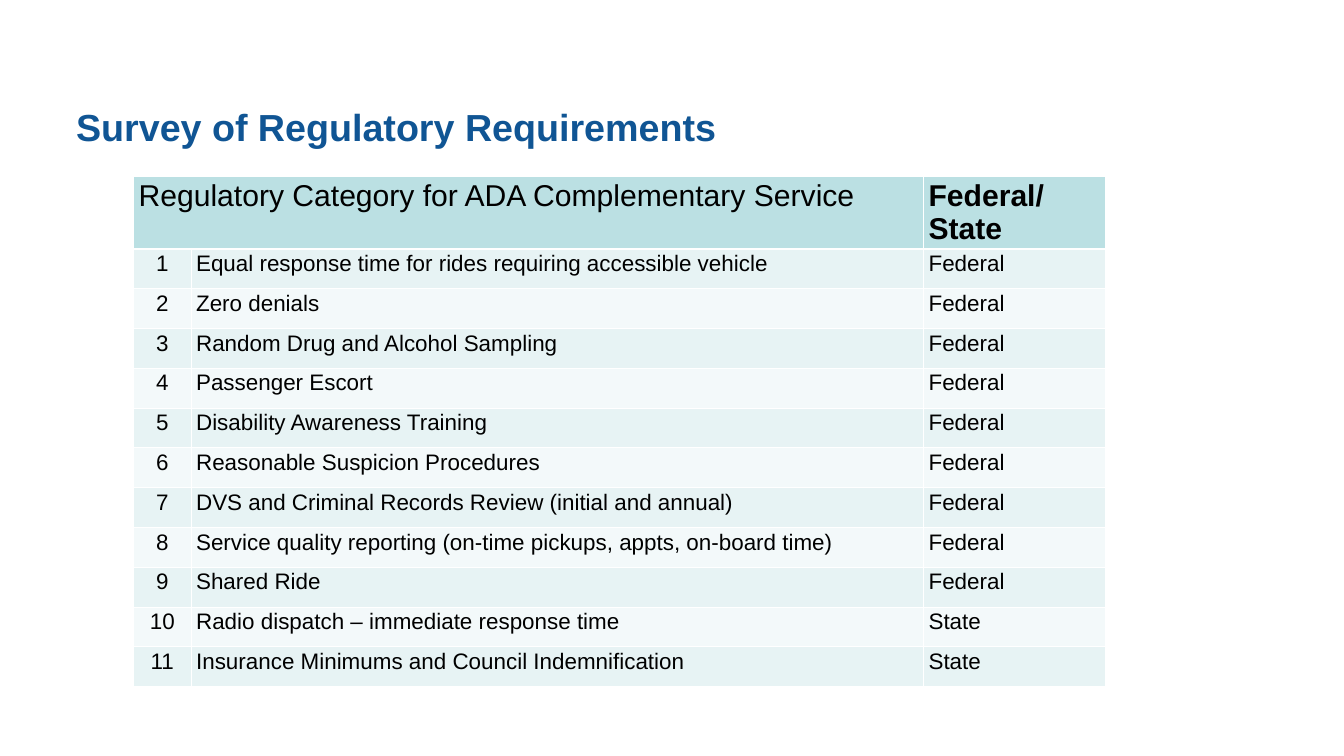
from typing import NamedTuple

from lxml.etree import SubElement
from pptx import Presentation
from pptx.dml.color import RGBColor
from pptx.enum.text import MSO_ANCHOR, PP_ALIGN
from pptx.oxml.ns import qn
from pptx.util import Pt

PX = 9144  # EMU in one px, 100 px to the inch
FONT = "Arial"
BLACK = RGBColor(0x00, 0x00, 0x00)
TITLE_BLUE = RGBColor(0x10, 0x55, 0x94)
HEADER_TEAL = RGBColor(0xBB, 0xE0, 0xE3)
BAND_COLORS = (RGBColor(0xE7, 0xF3, 0xF4), RGBColor(0xF3, 0xF9, 0xFA))
BORDER_COLOR = RGBColor(0xFF, 0xFF, 0xFF)

COLUMN_WIDTHS = (114, 1453, 361)
HEADER_HEIGHT = 85
ROW_HEIGHT = 79


class Requirement(NamedTuple):
    category: str
    level: str = "Federal"


REQUIREMENTS = (
    Requirement("Equal response time for rides requiring accessible vehicle"),
    Requirement("Zero denials"),
    Requirement("Random Drug and Alcohol Sampling"),
    Requirement("Passenger Escort"),
    Requirement("Disability Awareness Training"),
    Requirement("Reasonable Suspicion Procedures"),
    Requirement("DVS and Criminal Records Review (initial and annual)"),
    Requirement("Service quality reporting (on-time pickups, appts, on-board time)"),
    Requirement("Shared Ride"),
    Requirement("Radio dispatch – immediate response time", "State"),
    Requirement("Insurance Minimums and Council Indemnification", "State"),
)


def format_text(paragraph, size: float, color: RGBColor, bold: bool = False) -> None:
    for run in paragraph.runs:
        run.font.name = FONT
        run.font.size = Pt(size)
        run.font.bold = bold
        run.font.color.rgb = color


def paint_cell(cell, fill: RGBColor, bottom_width: int = 1) -> None:
    """Give the cell its borders, then its fill."""
    properties = cell._tc.get_or_add_tcPr()
    for side, width in (("L", 1), ("R", 1), ("T", 1), ("B", bottom_width)):
        line = SubElement(properties, qn(f"a:ln{side}"), w=str(Pt(width)))
        solid = SubElement(line, qn("a:solidFill"))
        SubElement(solid, qn("a:srgbClr"), val=str(BORDER_COLOR))
    cell.fill.solid()
    cell.fill.fore_color.rgb = fill


def write_cell(cell, text: str, size: float, bold: bool = False) -> None:
    cell.text_frame.text = text
    format_text(cell.text_frame.paragraphs[0], size, BLACK, bold)


def add_title(slide, text: str) -> None:
    title = slide.shapes.add_textbox(133 * PX, 177 * PX, 2399 * PX, 148 * PX)
    frame = title.text_frame
    frame.word_wrap = True
    frame.vertical_anchor = MSO_ANCHOR.MIDDLE
    frame.margin_left = frame.margin_right = 18 * PX
    frame.margin_top = frame.margin_bottom = 9 * PX
    frame.text = text
    format_text(frame.paragraphs[0], 53.8, TITLE_BLUE, bold=True)


def add_requirements_table(slide) -> None:
    row_count = len(REQUIREMENTS) + 1
    height = HEADER_HEIGHT + len(REQUIREMENTS) * ROW_HEIGHT
    table = slide.shapes.add_table(
        row_count, len(COLUMN_WIDTHS),
        265 * PX, 350 * PX, sum(COLUMN_WIDTHS) * PX, height * PX,
    ).table
    for column, width in zip(table.columns, COLUMN_WIDTHS):
        column.width = width * PX
    for index, row in enumerate(table.rows):
        row.height = (ROW_HEIGHT if index else HEADER_HEIGHT) * PX
        for cell in row.cells:
            if index:
                paint_cell(cell, BAND_COLORS[(index - 1) % 2])
            else:
                paint_cell(cell, HEADER_TEAL, bottom_width=3)

    table.cell(0, 0).merge(table.cell(0, 1))
    write_cell(table.cell(0, 0), "Regulatory Category for ADA Complementary Service", 43)
    write_cell(table.cell(0, 2), "Federal/State", 43, bold=True)
    for number, requirement in enumerate(REQUIREMENTS, start=1):
        for column, text in enumerate((str(number), *requirement)):
            write_cell(table.cell(number, column), text, 32)
        table.cell(number, 0).text_frame.paragraphs[0].alignment = PP_ALIGN.CENTER


def main() -> None:
    presentation = Presentation()
    presentation.slide_width = 2666 * PX
    presentation.slide_height = 1500 * PX
    slide = presentation.slides.add_slide(presentation.slide_layouts[6])
    add_requirements_table(slide)
    add_title(slide, "Survey of Regulatory Requirements")
    presentation.save("out.pptx")


if __name__ == "__main__":
    main()
